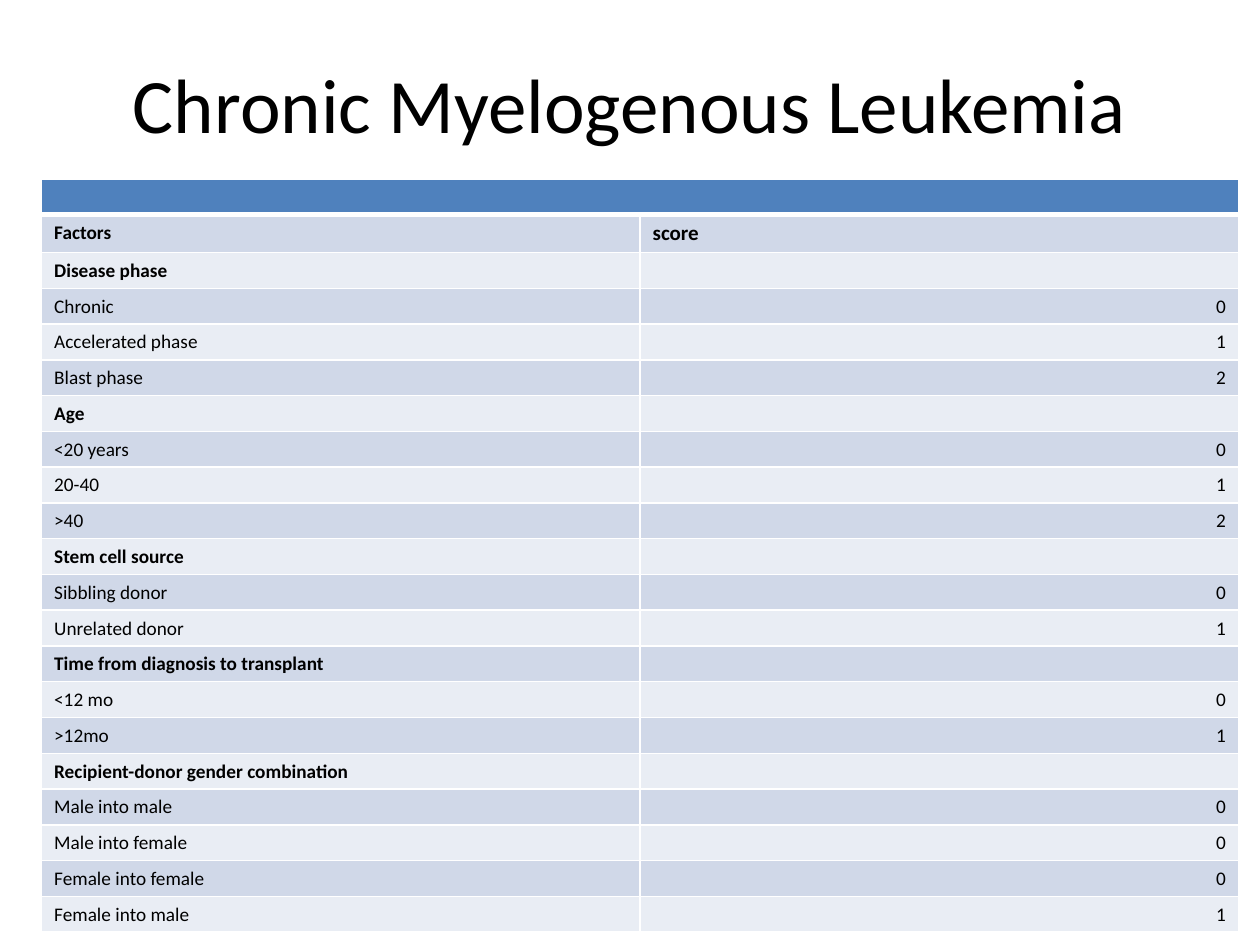
from lxml.etree import SubElement
from pptx import Presentation
from pptx.dml.color import RGBColor
from pptx.enum.text import MSO_ANCHOR, PP_ALIGN
from pptx.oxml.ns import qn
from pptx.util import Inches, Pt

COLORS = {"text": "000000", "header": "4F81BD", "dark": "D0D8E8",
          "light": "E9EDF4", "border": "FFFFFF"}
FONT = "Calibri"
GROUPS = [
    ("Disease phase", [("Chronic", 0), ("Accelerated phase", 1), ("Blast phase", 2)]),
    ("Age", [("<20 years", 0), ("20-40", 1), (">40", 2)]),
    ("Stem cell source", [("Sibbling donor", 0), ("Unrelated donor", 1)]),
    ("Time from diagnosis to transplant", [("<12 mo", 0), (">12mo", 1)]),
    ("Recipient-donor gender combination",
     [("Male into male", 0), ("Male into female", 0),
      ("Female into female", 0), ("Female into male", 1)]),
]


def add_run(p, text, size, bold=False):
    """Add one formatted run to a paragraph."""
    r = p.add_run()
    r.text = text
    r.font.name = FONT
    r.font.size = Pt(size)
    r.font.bold = bold
    r.font.color.rgb = RGBColor.from_string(COLORS["text"])


def add_title(s, text):
    """Add the centred slide title."""
    box = s.shapes.add_textbox(Inches(0.5), Inches(0.3), Inches(9), Inches(1.03))
    tf = box.text_frame
    tf.word_wrap = True
    tf.vertical_anchor = MSO_ANCHOR.MIDDLE
    p = tf.paragraphs[0]
    p.alignment = PP_ALIGN.CENTER
    add_run(p, text, 44)


def set_borders(cell, top=1, bottom=1):
    """Draw the four cell borders, with widths in points."""
    tc_pr = cell._tc.get_or_add_tcPr()
    for side, width in (("L", 1), ("R", 1), ("T", top), ("B", bottom)):
        ln = SubElement(tc_pr, qn(f"a:ln{side}"), w=str(Pt(width)))
        fill = SubElement(ln, qn("a:solidFill"))
        SubElement(fill, qn("a:srgbClr"), val=COLORS["border"])


def fill_cell(cell, text, color, size=11, bold=False, align=PP_ALIGN.LEFT):
    """Set the fill and text of a cell."""
    cell.fill.solid()
    cell.fill.fore_color.rgb = RGBColor.from_string(COLORS[color])
    p = cell.text_frame.paragraphs[0]
    p.alignment = align
    if text:
        add_run(p, text, size, bold)
    else:
        SubElement(p._p, qn("a:endParaRPr"), sz=str(size * 100))


def add_score_table(s):
    """Add the risk score table with its banded rows."""
    rows = [("", "", False), ("Factors", "score", True)]
    for heading, factors in GROUPS:
        rows.append((heading, "", True))
        rows += [(name, str(score), False) for name, score in factors]
    table = s.shapes.add_table(len(rows), 2, Inches(0.33), Inches(1.42),
                               Inches(9.5), Inches(0.25 * len(rows))).table
    for i, (factor, score, bold) in enumerate(rows):
        color = "header" if i == 0 else ("light", "dark")[i % 2]
        for cell in table.rows[i].cells:
            set_borders(cell, top=3 if i == 1 else 1, bottom=3 if i == 0 else 1)
        fill_cell(table.cell(i, 0), factor, color, bold=bold)
        fill_cell(table.cell(i, 1), score, color, size=12 if i == 1 else 11, bold=bold,
                  align=PP_ALIGN.LEFT if bold else PP_ALIGN.RIGHT)
    table.cell(0, 0).merge(table.cell(0, 1))


def main():
    """Build and save the slide."""
    prs = Presentation()
    prs.slide_width, prs.slide_height = Inches(10), Inches(7.5)
    s = prs.slides.add_slide(prs.slide_layouts[6])
    add_title(s, "Chronic Myelogenous Leukemia")
    add_score_table(s)
    prs.save("out.pptx")


if __name__ == "__main__":
    main()
